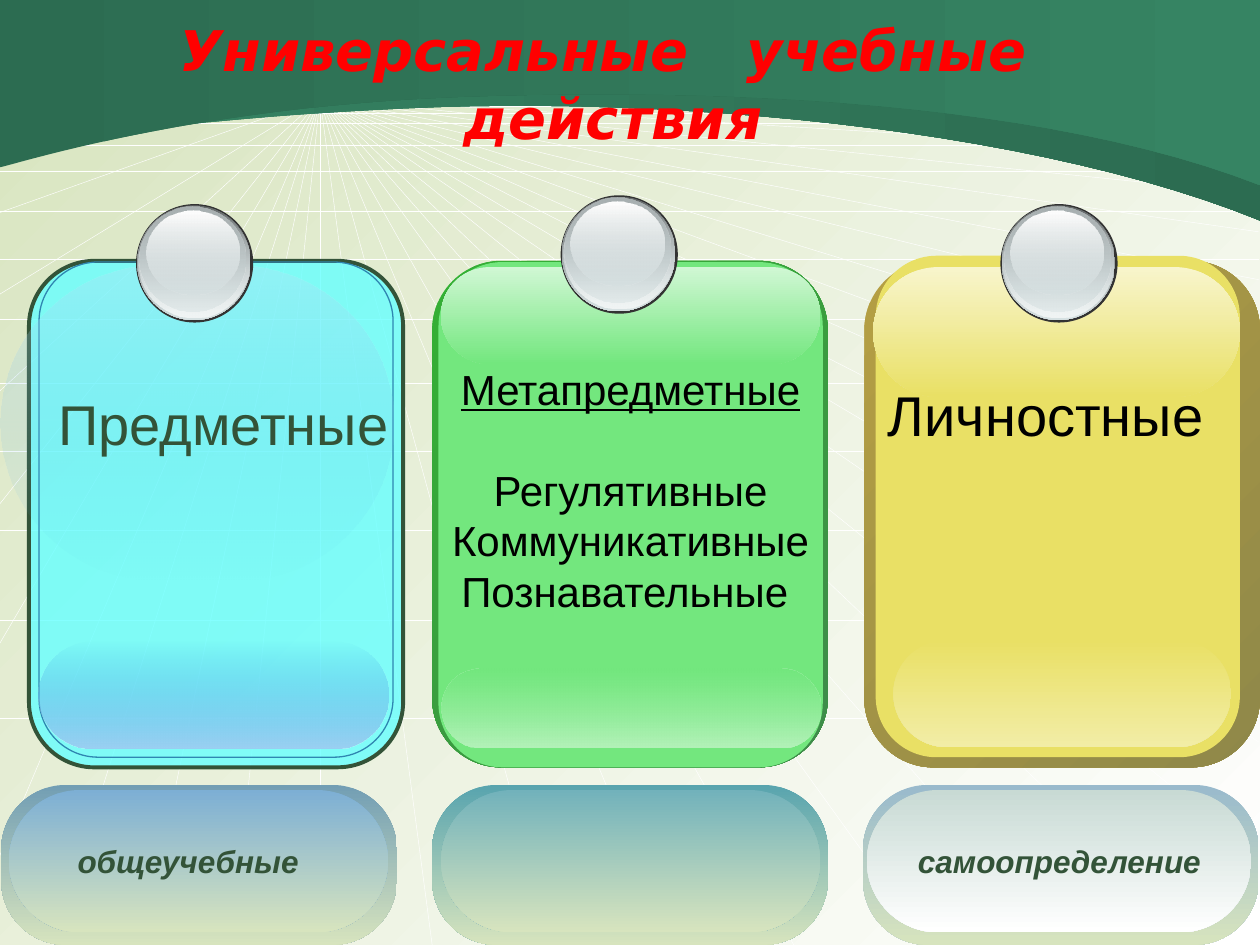
import pptx
import pptx.util
import pptx.dml.color
import pptx.enum.shapes
import pptx.enum.text
import pptx.oxml.ns
from lxml import etree

Inches = pptx.util.Inches
Pt = pptx.util.Pt
RGB = pptx.dml.color.RGBColor
SHAPE = pptx.enum.shapes.MSO_SHAPE
STRAIGHT = pptx.enum.shapes.MSO_CONNECTOR.STRAIGHT
ALIGN = pptx.enum.text.PP_ALIGN
ANCHOR = pptx.enum.text.MSO_ANCHOR
qn = pptx.oxml.ns.qn

WHITE, BLACK, RED = RGB(255, 255, 255), RGB(0, 0, 0), RGB(255, 0, 0)
CHARCOAL, STEEL = RGB(0x33, 0x33, 0x33), RGB(0x63, 0x68, 0x69)
SILVER, PEARL, GREY = RGB(0xD6, 0xE1, 0xE2), RGB(0xF1, 0xF5, 0xF5), RGB(0xAA, 0xB2, 0xB3)
SAGE, FOREST = RGB(0xD7, 0xE4, 0xBE), RGB(0x33, 0x53, 0x38)
ARCH_DARK, ARCH_LIGHT = RGB(0x2C, 0x6C, 0x51), RGB(0x36, 0x84, 0x63)
CYAN, RIM_BLUE = RGB(0x66, 0xFF, 0xFF), RGB(0x2F, 0x86, 0xB1)
BLUE, SKY, ICE = RGB(0x3C, 0xA1, 0xE6), RGB(0x9B, 0xCF, 0xF2), RGB(0xBE, 0xE0, 0xF7)
SLATE, DENIM = RGB(0x72, 0x9E, 0xB4), RGB(0x7D, 0xAF, 0xD4)
LEAF, MOSS = RGB(0x34, 0xB0, 0x34), RGB(0x3F, 0x8B, 0x4A)
GREEN, MINT, PALE_MINT = RGB(0x73, 0xE7, 0x7E), RGB(0xB3, 0xF2, 0xB9), RGB(0xD0, 0xF7, 0xD4)
TEAL, SOFT_TEAL = RGB(0x58, 0xA4, 0xAE), RGB(0x72, 0xB2, 0xBB)
GOLD, OLIVE = RGB(0xB5, 0x9F, 0x43), RGB(0x8F, 0x88, 0x49)
YELLOW, STRAW, CREAM = RGB(0xE9, 0xE0, 0x65), RGB(0xF2, 0xED, 0xA6), RGB(0xF8, 0xF5, 0xCC)
MIST, HAZE = RGB(0x99, 0xBA, 0xCC), RGB(0xC8, 0xDA, 0xD4)

TITLE = "Универсальные   учебные  действия"
SUBJECT = ["Предметные"]
META = ["Метапредметные", "Регулятивные", "Коммуникативные", "Познавательные "]
PERSONAL = ["Личностные"]
GENERAL = ["общеучебные"]
SELF = ["самоопределение"]

FOCUS = (2.54, 0.78)
RIGHT_RAYS = [1, 1.23, 1.54, 1.84, 2.22, 2.61, 3.07, 3.53, 4.06, 4.59, 5.2, 5.89, 6.8]
LEFT_RAYS = [0.78, 0.97, 1.16, 1.16, 1.69, 2.34, 3.11, 4.01, 5.12, 6.81]
BOTTOM_RAYS = [0.42, 1.13, 1.84, 2.54, 3.43, 4.39, 5.34, 6.3, 7.38, 8.46, 9.6]
HORIZONS = [0.84, 0.9, 0.98, 1.15, 1.36, 1.68, 2.06, 2.53, 3.04, 3.58, 4.21, 4.92, 5.7]

ARCHES = [
    ([(-0.01, 1.19), (0.11, 1.18), (1.33, 0.93), (3.47, 0.85),
      (5.61, 0.78), (8.31, 1.06), (10, 1.75)], (ARCH_LIGHT, 100, ARCH_DARK, 100)),
    ([(-0.01, 1.33), (0.11, 1.31), (1.51, 0.85), (3.64, 0.77),
      (5.77, 0.69), (8.31, 0.81), (10, 1.47)], (ARCH_DARK, 100, ARCH_LIGHT, 100)),
]

# box, corner, (start, opacity, end, opacity), angle
PANELS = {
    "subject card": ((0.23, 2.07, 2.97, 4.02), 0.175, (CYAN, 80, CYAN, 80), 90, (FOREST, 2.25)),
    "subject rim": ((0.31, 2.08, 2.81, 3.93), 0.167, None, 90, (RIM_BLUE, 0.75)),
    "subject glow": ((0.31, 5.09, 2.77, 0.85), 0.5, (BLUE, 0, SKY, 100), 90, None),
    "subject text": ((0, 2.11, 3.12, 2.5), 0.5, (ICE, 31, BLUE, 0), 90, None),
    "general rim": ((0.01, 6.23, 3.14, 1.27), 0.404, (SLATE, 100, SAGE, 100), 90, None),
    "general text": ((0.07, 6.27, 3.01, 1.13), 0.5, (DENIM, 100, SAGE, 100), 90, None),
    "meta rim": ((3.43, 2.07, 3.14, 4.02), 0.175, (LEAF, 100, MOSS, 100), 45, None),
    "meta text": ((3.48, 2.08, 3.05, 4.01), 0.167, (GREEN, 100, GREEN, 100), 90, None),
    "meta glow": ((3.5, 5.31, 3.01, 0.62), 0.5, (GREEN, 65, MINT, 100), 90, None),
    "meta shine": ((3.5, 2.12, 3.01, 0.77), 0.5, (PALE_MINT, 100, GREEN, 100), 90, None),
    "empty rim": ((3.43, 6.23, 3.14, 1.27), 0.404, (TEAL, 100, SAGE, 100), 90, None),
    "empty face": ((3.5, 6.27, 3.01, 1.13), 0.5, (SOFT_TEAL, 100, SAGE, 100), 90, None),
    "personal rim": ((6.86, 2.07, 3.14, 4.02), 0.175, (GOLD, 100, OLIVE, 100), 45, None),
    "personal card": ((6.95, 2.03, 2.89, 3.98), 0.167, (YELLOW, 100, YELLOW, 100), 90, None),
    "personal glow": ((7.09, 5.08, 2.68, 0.85), 0.5, (YELLOW, 100, STRAW, 100), 90, None),
    "personal shine": ((6.93, 2.12, 2.91, 1.03), 0.5, (CREAM, 100, YELLOW, 100), 90, None),
    "self rim": ((6.85, 6.23, 3.14, 1.27), 0.404, (MIST, 100, SAGE, 100), 90, None),
    "self text": ((6.88, 6.27, 3.05, 1.13), 0.5, (HAZE, 100, WHITE, 100), 90, None),
}
PINS = [(1.08, 1.62), (7.94, 1.62), (4.45, 1.55)]
PIN_LAYERS = [
    ((0, 0, 0.93, 0.94), (CHARCOAL, 100, CHARCOAL, 100)),
    ((0.01, 0.01, 0.9, 0.91), (STEEL, 100, SILVER, 100)),
    ((0.02, 0.02, 0.88, 0.88), (SILVER, 0, PEARL, 100)),
    ((0.03, 0.02, 0.84, 0.83), (GREY, 100, SILVER, 48)),
    ((0.08, 0.05, 0.74, 0.67), (WHITE, 100, SILVER, 38)),
]


def set_alpha(color_parent, alpha):
    if alpha < 100:
        color = next(color_parent.iter(qn("a:srgbClr")))
        etree.SubElement(color, qn("a:alpha")).set("val", str(alpha * 1000))


def paint(fill, colors, angle):
    start, start_alpha, end, end_alpha = colors
    if (start, start_alpha) == (end, end_alpha):
        fill.solid()
        fill.fore_color.rgb = start
        return
    fill.gradient()
    fill.gradient_angle = (360 - angle) % 360
    for stop, color in zip(fill.gradient_stops, (start, end)):
        stop.color.rgb = color


def finish(shape, colors, angle=90, outline=None):
    shape.shadow.inherit = False
    if colors:
        paint(shape.fill, colors, angle)
        stops = list(shape._element.spPr.iter(qn("a:gs"))) or [shape._element.spPr]
        for stop, alpha in zip(stops, colors[1::2]):
            set_alpha(stop, alpha)
    else:
        shape.fill.background()
    if outline:
        shape.line.color.rgb = outline[0]
        shape.line.width = Pt(outline[1])
    else:
        shape.line.fill.background()


def add_ray(shapes, start, end):
    ray = shapes.add_connector(STRAIGHT, *map(Inches, start + end))
    ray.line.color.rgb = WHITE
    ray.line.width = Pt(0.25)
    etree.SubElement(ray._element.spPr, qn("a:effectLst"))


def bezier(a, b, c, d, steps=24):
    for t in (i / steps for i in range(1, steps + 1)):
        s = 1 - t
        yield tuple(s**3 * p + 3 * s * s * t * q + 3 * s * t * t * r + t**3 * u
                    for p, q, r, u in zip(a, b, c, d))


def write(shape, lines, size, color, align=ALIGN.LEFT, strong=False,
          anchor=ANCHOR.MIDDLE, wrap=False, font="Arial"):
    frame = shape.text_frame
    frame.text = "\n".join(lines)
    frame.word_wrap = wrap
    frame.vertical_anchor = anchor
    for paragraph in frame.paragraphs:
        paragraph.alignment = align
        for run in paragraph.runs:
            run.font.name, run.font.size = font, Pt(size)
            run.font.color.rgb = color
            run.font.bold = run.font.italic = strong
    return frame


deck = pptx.Presentation()
deck.slide_width, deck.slide_height = Inches(10), Inches(7.5)
slide = deck.slides.add_slide(deck.slide_layouts[5])
paint(slide.background.fill, (SAGE, 100, WHITE, 100), 45)

rays = slide.shapes.add_group_shape().shapes
ends = ([(9.99, y) for y in RIGHT_RAYS] + [(-0.01, y) for y in LEFT_RAYS]
        + [(x, 7.5) for x in BOTTOM_RAYS])
for end in ends:
    add_ray(rays, FOCUS, end)
for y in HORIZONS:
    add_ray(rays, (-0.01, y), (9.99, y))

for curve, colors in ARCHES:
    points = [curve[0], *bezier(*curve[:4]), *bezier(*curve[3:]), (10, 0)]
    builder = slide.shapes.build_freeform(Inches(-0.01), 0)
    builder.add_line_segments([(Inches(x), Inches(y)) for x, y in points], close=True)
    finish(builder.convert_to_shape(), colors, 0)

title = slide.shapes.title
slide.shapes._spTree.append(title._element)
title.left, title.top, title.width, title.height = map(Inches, (0.23, 0.3, 9.27, 0.72))
write(title, [TITLE], 32, RED, ALIGN.CENTER, True, wrap=True, font="DejaVu Sans")
title.text_frame.auto_size = pptx.enum.text.MSO_AUTO_SIZE.NONE

panels = {}
for part, (box, corner, colors, angle, outline) in PANELS.items():
    panel = slide.shapes.add_shape(SHAPE.ROUNDED_RECTANGLE, *map(Inches, box))
    panel.adjustments[0] = corner
    finish(panel, colors, angle, outline)
    panels[part] = panel

write(panels["subject text"], SUBJECT, 32, FOREST)
write(panels["general text"], GENERAL, 18, FOREST, strong=True).margin_left = Inches(0.38)
write(panels["self text"], SELF, 18, FOREST, strong=True).margin_left = Inches(0.24)
meta = write(panels["meta text"], META, 24, BLACK, ALIGN.CENTER)
meta.margin_bottom = Inches(0.45)
meta.paragraphs[0].runs[0].font.underline = True
meta.paragraphs[1].space_before = Pt(28.8)

personal = slide.shapes.add_textbox(*map(Inches, (6.95, 2.97, 2.83, 1.04)))
personal_frame = write(personal, PERSONAL, 32, BLACK, ALIGN.CENTER, anchor=ANCHOR.TOP, wrap=True)
personal_frame.margin_left, personal_frame.margin_right = Inches(0.03), Inches(0.16)

for left, top in PINS:
    pin = slide.shapes.add_group_shape().shapes
    for (dx, dy, width, height), colors in PIN_LAYERS:
        box = map(Inches, (left + dx, top + dy, width, height))
        finish(pin.add_shape(SHAPE.OVAL, *box), colors)

deck.save("out.pptx")
